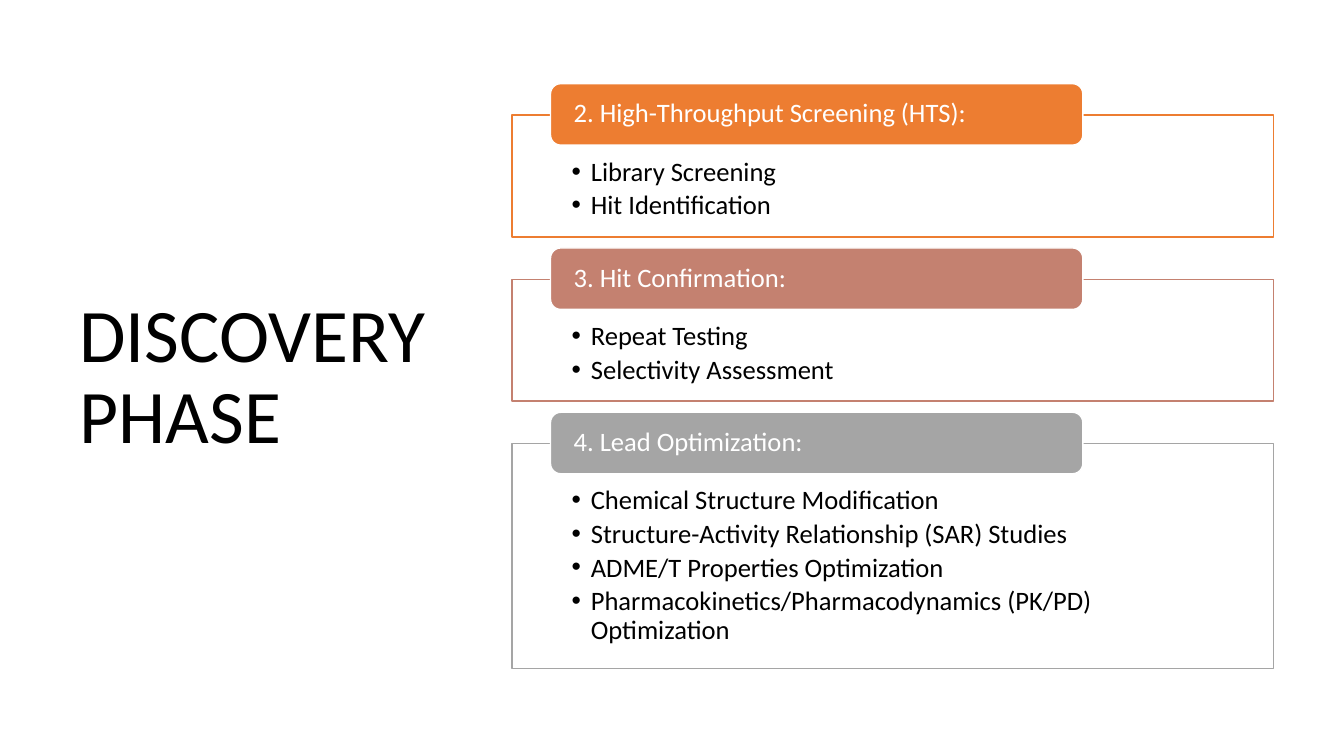
from dataclasses import dataclass

from lxml.etree import SubElement
from pptx import Presentation
from pptx.dml.color import RGBColor
from pptx.enum.shapes import MSO_SHAPE
from pptx.enum.text import MSO_ANCHOR, PP_ALIGN
from pptx.oxml.ns import qn
from pptx.util import Inches, Pt


@dataclass(frozen=True)
class Theme:
    font: str = "Calibri"
    title_size: int = 54
    body_size: int = 19
    text: str = "000000"
    white: str = "FFFFFF"
    orange: str = "ED7D31"
    clay: str = "C48170"
    grey: str = "A5A5A5"


class SlideBuilder:
    def __init__(self, slide, theme):
        self.s = slide
        self.theme = theme

    def frame(self, sp, anchor, insets):
        tf = sp.text_frame
        tf.word_wrap = True
        tf.vertical_anchor = anchor
        tf.margin_left, tf.margin_top, tf.margin_right, tf.margin_bottom = map(Inches, insets)
        return tf

    def format(self, p, size, color):
        p.alignment = PP_ALIGN.LEFT
        p.line_spacing = 0.9
        for r in p.runs:
            r.font.name = self.theme.font
            r.font.size = Pt(size)
            r.font.color.rgb = RGBColor.from_string(color)

    def shape(self, kind, box, fill, line):
        sp = self.s.shapes.add_shape(kind, *map(Inches, box))
        sp.shadow.inherit = False
        sp.fill.solid()
        sp.fill.fore_color.rgb = RGBColor.from_string(fill)
        sp.line.color.rgb = RGBColor.from_string(line)
        sp.line.width = Pt(1)
        return sp

    def title(self, text, box):
        sp = self.s.shapes.add_textbox(*map(Inches, box))
        tf = self.frame(sp, MSO_ANCHOR.MIDDLE, (0.1, 0.05, 0.1, 0.05))
        tf.text = text
        self.format(tf.paragraphs[0], self.theme.title_size, self.theme.text)

    def bullet(self, p):
        pPr = p._p.get_or_add_pPr()
        pPr.set("marL", str(Inches(0.19)))
        pPr.set("indent", str(-Inches(0.19)))
        SubElement(pPr, qn("a:buFont"), typeface="Arial")
        SubElement(pPr, qn("a:buChar"), char="•")

    def panel(self, items, box, color):
        sp = self.shape(MSO_SHAPE.RECTANGLE, box, self.theme.white, color)
        # 90% opaque fill
        fill_color = sp._element.spPr.find(qn("a:solidFill"))[0]
        SubElement(fill_color, qn("a:alpha"), val="90000")
        tf = self.frame(sp, MSO_ANCHOR.TOP, (0.59, 0.43, 0.59, 0.15))
        tf.text = "\n".join(items)
        for p in tf.paragraphs:
            p.level = 1
            self.bullet(p)
            p.space_after = Pt(3.5)
            self.format(p, self.theme.body_size, self.theme.text)

    def header(self, text, box, color):
        sp = self.shape(MSO_SHAPE.ROUNDED_RECTANGLE, box, color, self.theme.white)
        tf = self.frame(sp, MSO_ANCHOR.MIDDLE, (0.2, 0, 0.2, 0))
        tf.text = text
        self.format(tf.paragraphs[0], self.theme.body_size, self.theme.white)


def main():
    prs = Presentation()
    prs.slide_width, prs.slide_height = Inches(13.33), Inches(7.5)
    theme = Theme()
    builder = SlideBuilder(prs.slides.add_slide(prs.slide_layouts[6]), theme)

    # Title on the left
    builder.title("DISCOVERY PHASE", (0.69, 0.7, 3.74, 6.11))

    # Stages stacked on the right: heading, colour, panel height, bullets
    stages = [
        ("2. High-Throughput Screening (HTS):", theme.orange, 1.21,
         ["Library Screening", "Hit Identification"]),
        ("3. Hit Confirmation:", theme.clay, 1.21,
         ["Repeat Testing", "Selectivity Assessment"]),
        ("4. Lead Optimization:", theme.grey, 2.23,
         ["Chemical Structure Modification",
          "Structure-Activity Relationship (SAR) Studies",
          "ADME/T Properties Optimization",
          "Pharmacokinetics/Pharmacodynamics (PK/PD) Optimization"]),
    ]
    top, gap = 1.14, 0.42
    for heading, color, height, items in stages:
        builder.panel(items, (5.08, top, 7.55, height), color)
        builder.header(heading, (5.46, top - 0.31, 5.28, 0.61), color)
        top += height + gap

    prs.save("out.pptx")


if __name__ == "__main__":
    main()
